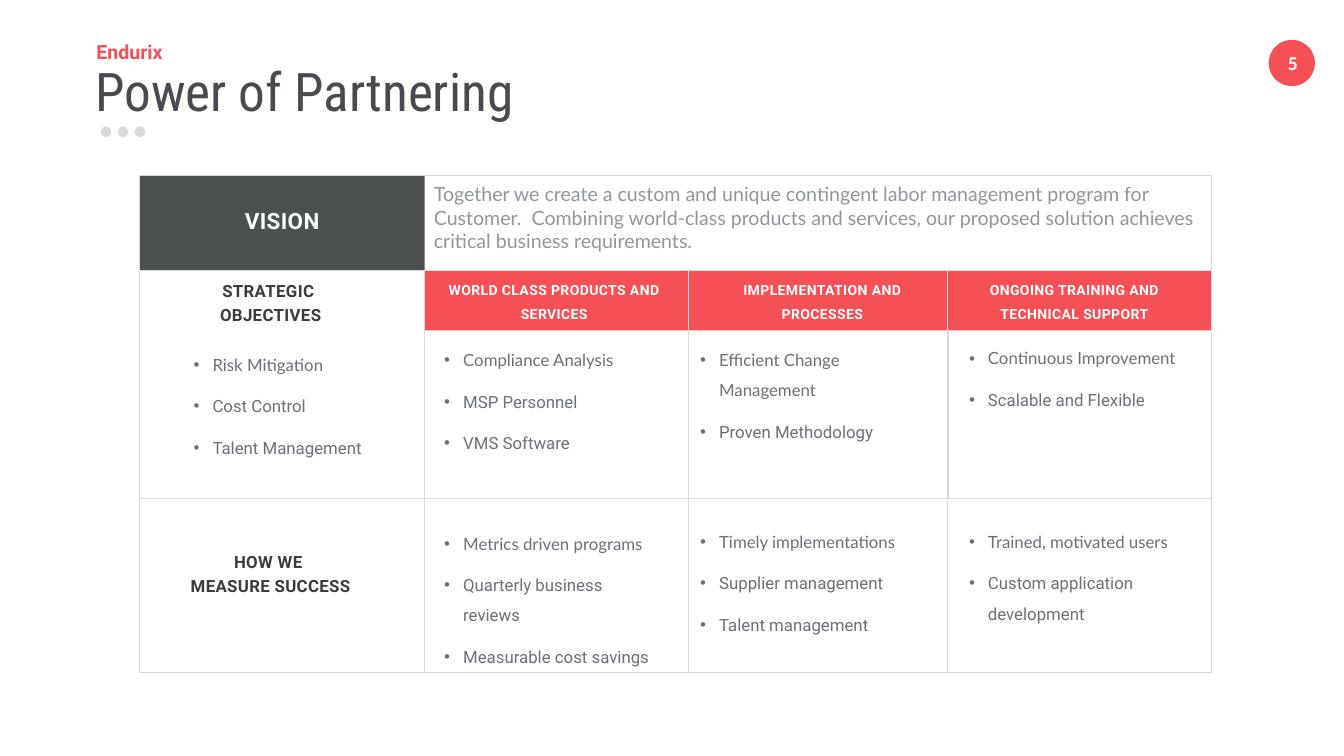
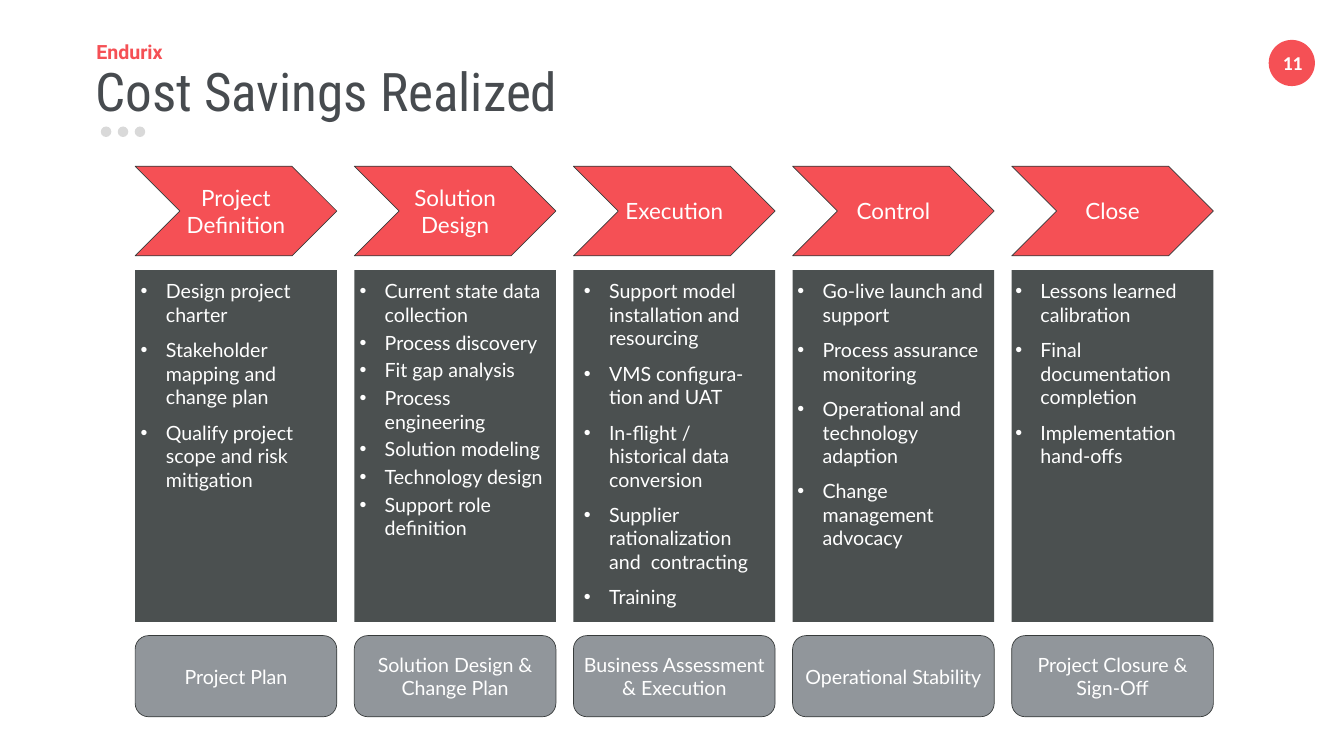
from dataclasses import dataclass
from typing import NamedTuple, Optional

from lxml.etree import SubElement
from pptx import Presentation
from pptx.dml.color import RGBColor
from pptx.enum.shapes import MSO_SHAPE as Shape
from pptx.enum.text import MSO_ANCHOR as Anchor, MSO_AUTO_SIZE as AutoSize, PP_ALIGN as Align
from pptx.oxml.ns import qn
from pptx.util import Pt

WHITE = RGBColor(0xFF, 0xFF, 0xFF)
RED = RGBColor(0xF5, 0x50, 0x55)
SLATE = RGBColor(0x4B, 0x50, 0x50)
INK = RGBColor(0x37, 0x3B, 0x3B)
HEADING = RGBColor(0x38, 0x3C, 0x3C)
TITLE = RGBColor(0x47, 0x4B, 0x4F)
BODY = RGBColor(0x6B, 0x70, 0x76)
GRAY = RGBColor(0x91, 0x96, 0x9B)
RULE = RGBColor(0xD9, 0xD9, 0xD9)


class Box(NamedTuple):
    left: float
    top: float
    width: float
    height: float


class Insets(NamedTuple):
    x: float = 0
    y: float = 0


DEFAULT_INSETS = Insets(7.2, 3.6)


@dataclass(frozen=True)
class Style:
    size: float
    font: str
    color: RGBColor
    bold: bool = False
    align: Align = Align.LEFT
    spacing: float = 0
    line: Optional[float] = None
    before: float = 0
    after: float = 0
    indent: float = 0
    rest_font: str = ""


TITLE_STYLE = Style(76, "Roboto Condensed", TITLE)
BRAND_STYLE = Style(28, "Roboto", RED, bold=True)
NUMBER_STYLE = Style(28, "Calibri", WHITE, bold=True, align=Align.CENTER)
VISION_TEXT = Style(28, "Lato", GRAY)
STEP_STYLE = Style(32, "Lato", WHITE, align=Align.CENTER)
RESULT_STYLE = Style(28, "Lato", WHITE, align=Align.CENTER)
GRID_LIST = Style(24, "Lato", BODY, line=1.5, after=16, indent=27, rest_font="Roboto")


def caption(size: float, color: RGBColor) -> Style:
    return Style(size, "Roboto", color, bold=True, align=Align.CENTER,
                 spacing=0.5, line=Pt(34.7), after=32)


def panel_list(before: float) -> Style:
    return Style(28, "Lato", WHITE, before=before, indent=36)


def place(sp, box: Box) -> None:
    sp.left, sp.top, sp.width, sp.height = (Pt(v) for v in box)


def add_bullet(p, indent: float) -> None:
    pPr = p._p.get_or_add_pPr()
    pPr.set("marL", str(Pt(indent)))
    pPr.set("indent", str(-Pt(indent)))
    SubElement(pPr, qn("a:buFont")).set("typeface", "Arial")
    SubElement(pPr, qn("a:buChar")).set("char", "•")


def write(sp, text: str, style: Style, insets: Insets = Insets(),
          anchor: Anchor = Anchor.TOP, wrap: bool = True) -> None:
    """Fill a shape with text, one paragraph a line, and format it."""
    tf = sp.text_frame
    tf.text = text
    tf.auto_size = AutoSize.NONE
    tf.word_wrap = wrap
    tf.vertical_anchor = anchor
    tf.margin_left = tf.margin_right = Pt(insets.x)
    tf.margin_top = tf.margin_bottom = Pt(insets.y)
    for i, p in enumerate(tf.paragraphs):
        p.alignment = style.align
        p.line_spacing = style.line
        p.space_before, p.space_after = Pt(style.before), Pt(style.after)
        if style.indent:
            add_bullet(p, style.indent)
        for r in p.runs:
            r.font.name = style.rest_font if i and style.rest_font else style.font
            r.font.size = Pt(style.size)
            r.font.bold = style.bold
            r.font.color.rgb = style.color
            if style.spacing:
                r._r.get_or_add_rPr().set("spc", str(int(style.spacing * 100)))


def add_text(s, box: Box, text: str, style: Style, **layout) -> None:
    write(s.shapes.add_textbox(*(Pt(v) for v in box)), text, style, **layout)


def add_list(s, box: Box, items: list[str], style: Style) -> None:
    """Use the body placeholder while it is empty, then text boxes."""
    body = s.placeholders[1]
    if body.text_frame.text:
        add_text(s, box, "\n".join(items), style)
        return
    place(body, box)
    body.element.getparent().append(body.element)
    write(body, "\n".join(items), style)


def add_block(s, kind: Shape, box: Box, fill: Optional[RGBColor] = None,
              line: Optional[RGBColor] = None, weight: float = 0.75):
    sp = s.shapes.add_shape(kind, *(Pt(v) for v in box))
    sp.shadow.inherit = False
    if fill is None:
        sp.fill.background()
    else:
        sp.fill.solid()
        sp.fill.fore_color.rgb = fill
    if line is None:
        sp.line.fill.background()
    else:
        sp.line.color.rgb = line
        sp.line.width = Pt(weight)
    return sp


def new_slide(prs, title: str, title_width: float, number: int):
    """Add a slide with the shared title, brand line, dots and number badge."""
    s = prs.slides.add_slide(prs.slide_layouts[1])
    add_block(s, Shape.OVAL, Box(1812, 57, 66, 66), RED)
    add_text(s, Box(1815, 65, 62.5, 48), str(number), NUMBER_STYLE,
             insets=Insets(14.4, 7.2), wrap=False)
    place(s.shapes.title, Box(136, 83.5, title_width, 92))
    write(s.shapes.title, title, TITLE_STYLE, anchor=Anchor.MIDDLE, wrap=False)
    add_text(s, Box(137.5, 57.5, 101, 34), "Endurix", BRAND_STYLE,
             anchor=Anchor.MIDDLE, wrap=False)
    for i in range(3):
        add_block(s, Shape.OVAL, Box(144 + 24.2 * i, 180.7, 15, 15), RULE)
    return s


# Edges of the partnering grid
LEFT, RIGHT = 199.5, 1729.5
TOP, MIDDLE, LOWER, BOTTOM = 250.5, 386, 711.5, 960.5


@dataclass(frozen=True)
class Pillar:
    left: float
    right: float
    outline_bottom: float
    caption_left: float
    caption: str
    list_left: float
    list_width: float
    objectives_top: float
    objectives: list[str]
    measures_top: float
    measures: list[str]


PILLARS = [
    Pillar(606, 982.5, BOTTOM, 636, "WORLD CLASS PRODUCTS AND SERVICES", 634.5, 312.5,
           485.5, ["Compliance Analysis", "MSP Personnel", "VMS Software"],
           747.5, ["Metrics driven programs", "Quarterly business reviews",
                   "Measurable cost savings"]),
    Pillar(982.5, 1355, LOWER, 1019, "IMPLEMENTATION AND PROCESSES", 1000, 337,
           485.5, ["Efficient Change Management", "Proven Methodology"],
           745, ["Timely implementations", "Supplier management", "Talent management"]),
    Pillar(1353.5, RIGHT, BOTTOM, 1379, "ONGOING TRAINING AND TECHNICAL SUPPORT", 1384, 312.5,
           483, ["Continuous Improvement", "Scalable and Flexible"],
           745, ["Trained, motivated users", "Custom application development"]),
]


def build_partnering(prs) -> None:
    s = new_slide(prs, "Power of Partnering", 618, 5)
    width = RIGHT - LEFT
    add_block(s, Shape.RECTANGLE, Box(LEFT, TOP, 407, MIDDLE - TOP), SLATE)
    add_block(s, Shape.RECTANGLE, Box(LEFT, TOP, width, MIDDLE - TOP), line=RULE)
    add_text(s, Box(186.5, 300, 433, 35), "VISION", caption(32, WHITE))
    add_text(s, Box(612.5, 256.5, 1120, 109),
             "Together we create a custom and unique contingent labor management program for "
             "Customer.  Combining world-class products and services, our proposed solution "
             "achieves critical business requirements.", VISION_TEXT, insets=DEFAULT_INSETS)

    for bottom in (LOWER, BOTTOM):
        add_block(s, Shape.RECTANGLE, Box(LEFT, MIDDLE, width, bottom - MIDDLE), line=RULE)
    for top, heading in ((394.5, "STRATEGIC \vOBJECTIVES"), (782, "HOW WE \vMEASURE SUCCESS")):
        add_text(s, Box(231, top, 311, 70.5), heading, caption(24, HEADING))
    add_list(s, Box(276.5, 492, 312.5, 163.5),
             ["Risk Mitigation", "Cost Control", "Talent Management"], GRID_LIST)

    for c in PILLARS:
        span = c.right - c.left
        add_block(s, Shape.RECTANGLE, Box(c.left, MIDDLE, span, 86), RED)
        add_block(s, Shape.RECTANGLE, Box(c.left, MIDDLE, span, c.outline_bottom - MIDDLE),
                  line=RULE)
        add_text(s, Box(c.caption_left, 391.5, 311, 70.5), c.caption, caption(20, WHITE))
        for top, items in ((c.objectives_top, c.objectives), (c.measures_top, c.measures)):
            add_list(s, Box(c.list_left, top, c.list_width, 163.5), items, GRID_LIST)


@dataclass(frozen=True)
class Phase:
    step: str
    result: str
    list_left: float
    list_width: float
    tasks: list[str]
    gap: float = 16.8


PHASES = [
    Phase("Project\nDefinition", "Project Plan", 201, 268.5,
          ["Design project charter", "Stakeholder mapping and change plan",
           "Qualify project scope and risk mitigation"]),
    Phase("Solution Design", "Solution Design & Change Plan", 513.5, 276.5,
          ["Current state data collection", "Process discovery", "Fit gap analysis",
           "Process engineering", "Solution modeling", "Technology design",
           "Support role definition"], gap=6),
    Phase("Execution", "Business Assessment & Execution", 834, 257,
          ["Support model installation and resourcing", "VMS configura-tion and UAT",
           "In-flight / historical data conversion",
           "Supplier rationalization and  contracting", "Training"]),
    Phase("Control", "Operational Stability", 1139, 266.5,
          ["Go-live launch and support", "Process assurance monitoring",
           "Operational and technology adaption", "Change management advocacy"]),
    Phase("Close", "Project Closure & Sign-Off", 1450, 278.5,
          ["Lessons learned calibration", "Final documentation completion",
           "Implementation hand-offs"]),
]
PHASE_LEFT, PHASE_PITCH, PHASE_WIDTH = 193, 313, 288


def build_savings(prs) -> None:
    s = new_slide(prs, "Cost Savings Realized", 691, 11)
    for i, phase in enumerate(PHASES):
        left = PHASE_LEFT + i * PHASE_PITCH
        add_block(s, Shape.RECTANGLE, Box(left, 386, PHASE_WIDTH, 502.5), SLATE)
        add_list(s, Box(phase.list_left, 399, phase.list_width, 454), phase.tasks,
                 panel_list(phase.gap))
        for kind, top, height, fill, text, style in (
            (Shape.ROUNDED_RECTANGLE, 908, 116, GRAY, phase.result, RESULT_STYLE),
            (Shape.CHEVRON, 237.5, 128, RED, phase.step, STEP_STYLE),
        ):
            sp = add_block(s, kind, Box(left, top, PHASE_WIDTH, height), fill, INK, 1)
            write(sp, text, style, DEFAULT_INSETS, Anchor.MIDDLE)


def main() -> None:
    prs = Presentation()
    prs.slide_width, prs.slide_height = Pt(1919.5), Pt(1080)
    build_partnering(prs)
    build_savings(prs)
    prs.save("out.pptx")


if __name__ == "__main__":
    main()
